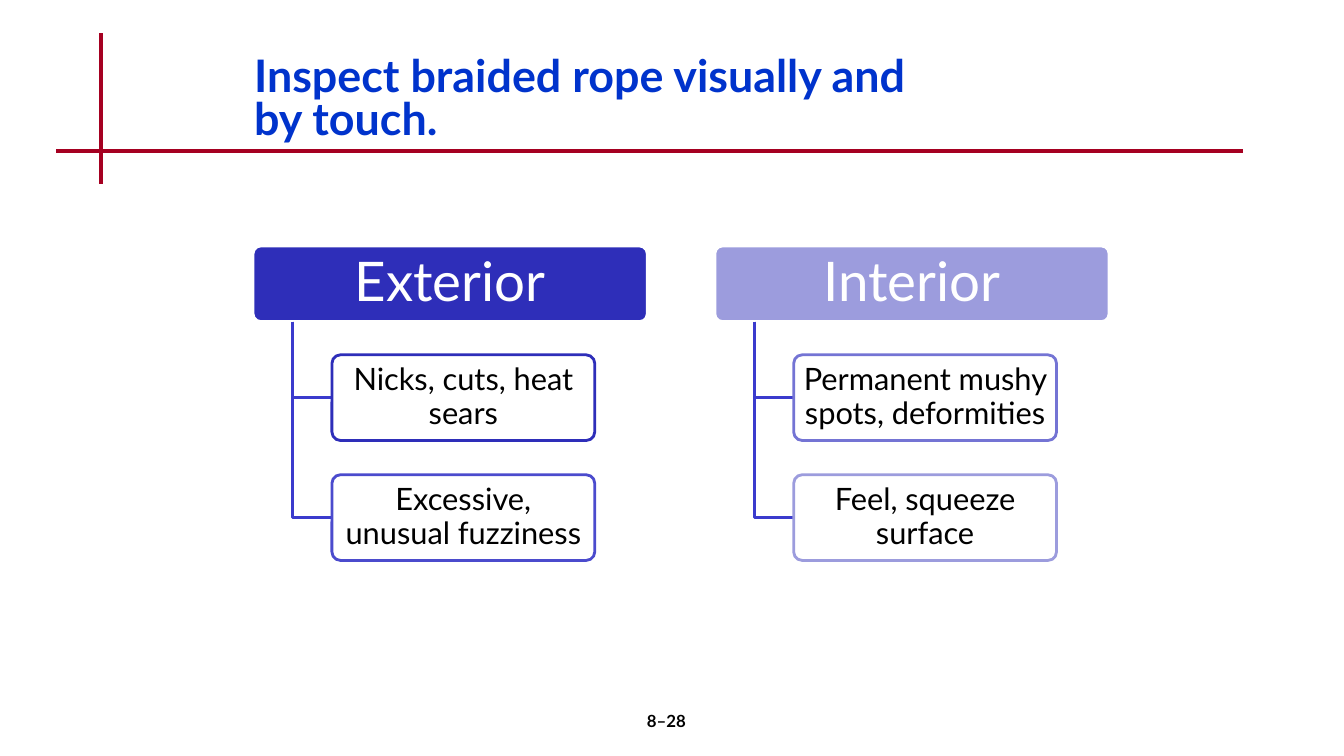
import pptx
import pptx.dml.color
import pptx.enum.shapes
import pptx.enum.text
import pptx.oxml.ns
import pptx.util
from lxml import etree

Inches = pptx.util.Inches
Pt = pptx.util.Pt
RGBColor = pptx.dml.color.RGBColor
PP_ALIGN = pptx.enum.text.PP_ALIGN
MSO_ANCHOR = pptx.enum.text.MSO_ANCHOR
MSO_SHAPE = pptx.enum.shapes.MSO_SHAPE
qn = pptx.oxml.ns.qn

WHITE = RGBColor(0xFF, 0xFF, 0xFF)
BLACK = RGBColor(0x00, 0x00, 0x00)
TITLE_BLUE = RGBColor(0x00, 0x33, 0xCC)
RULE_RED = RGBColor(0xA5, 0x00, 0x21)
BRANCH_BLUE = RGBColor(0x3B, 0x3B, 0xCD)
NAVY = RGBColor(0x2E, 0x2E, 0xB9)
INDIGO = RGBColor(0x4B, 0x4B, 0xCD)
PERIWINKLE = RGBColor(0x74, 0x74, 0xD4)
LAVENDER = RGBColor(0x9C, 0x9C, 0xDD)

COLUMNS = [
    ("Exterior", NAVY, [("Nicks, cuts, heat sears", NAVY),
                        ("Excessive, unusual fuzziness", INDIGO)]),
    ("Interior", LAVENDER, [("Permanent mushy spots, deformities", PERIWINKLE),
                            ("Feel, squeeze surface", LAVENDER)]),
]


def apply(target, values):
    """Set each attribute of target from a dict of format values."""
    for attribute, value in values.items():
        setattr(target, attribute, value)


def write(shape, wording, size, color, bold=False, align=PP_ALIGN.CENTER,
          spacing=0.9, anchor=MSO_ANCHOR.MIDDLE, inset=(0.1, 0.05)):
    """Put one formatted paragraph into a shape."""
    across, down = (Inches(value) for value in inset)
    frame = shape.text_frame
    apply(frame, {"word_wrap": True, "auto_size": pptx.enum.text.MSO_AUTO_SIZE.NONE,
                  "vertical_anchor": anchor, "margin_left": across,
                  "margin_right": across, "margin_top": down, "margin_bottom": down})
    paragraph = frame.paragraphs[0]
    apply(paragraph, {"text": wording, "alignment": align, "line_spacing": spacing,
                      "space_before": Pt(0)})
    apply(paragraph.font, {"name": "Lato", "size": Pt(size), "bold": bold})
    paragraph.font.color.rgb = color


def add_rule(slide, left, top, right, bottom):
    """Draw one straight red rule."""
    rule = slide.shapes.add_connector(
        pptx.enum.shapes.MSO_CONNECTOR.STRAIGHT,
        Inches(left), Inches(top), Inches(right), Inches(bottom))
    rule.line.color.rgb = RULE_RED
    rule.line.width = Pt(3)
    etree.SubElement(rule._element.spPr, qn("a:effectLst"))


def add_card(slide, left, top, width, height, fill, outline):
    """Draw a rounded box with a solid fill and outline."""
    card = slide.shapes.add_shape(MSO_SHAPE.ROUNDED_RECTANGLE, Inches(left),
                                  Inches(top), Inches(width), Inches(height))
    card.adjustments[0] = 0.1
    card.shadow.inherit = False
    card.fill.solid()
    card.fill.fore_color.rgb = fill
    card.line.color.rgb = outline
    card.line.width = Pt(2)
    return card


def add_branch(slide, left, top, width, height):
    """Draw an elbow going down and then right."""
    builder = slide.shapes.build_freeform(Inches(left), Inches(top))
    builder.add_line_segments([(Inches(left), Inches(top + height)),
                               (Inches(left + width), Inches(top + height))], close=False)
    branch = builder.convert_to_shape()
    branch.shadow.inherit = False
    branch.fill.background()
    branch.line.color.rgb = BRANCH_BLUE
    branch.line.width = Pt(2)


def add_column(slide, left, top, width, heading, color, findings):
    """Draw a heading with its findings hanging below it."""
    heading_height, finding_height, pitch = 0.75, 0.85, 1.19
    indent = width / 10
    heading_card = add_card(slide, left, top, width, heading_height, color, WHITE)
    write(heading_card, heading, 39, WHITE, inset=(0.08, 0.05))
    base = top + heading_height
    for row, (finding, outline) in enumerate(findings):
        finding_top = base + 0.33 + row * pitch
        add_branch(slide, left + indent, base, indent,
                   finding_top + finding_height / 2 - base)
        finding_card = add_card(slide, left + 2 * indent, finding_top, width * 2 / 3,
                                finding_height, WHITE, outline)
        write(finding_card, finding, 22, BLACK, inset=(0.05, 0.03))


def add_header(slide, left, top, width, height):
    """Place the crossed rules and the title."""
    add_rule(slide, 1, 0.33, 1, 1.83)
    add_rule(slide, 0.56, top + height, 12.33, top + height)
    title = slide.shapes.title
    apply(title, {"left": Inches(left), "top": Inches(top),
                  "width": Inches(width), "height": Inches(height)})
    write(title, "Inspect braided rope visually and by touch.", 32, TITLE_BLUE,
          bold=True, align=PP_ALIGN.LEFT, spacing=0.8)


def add_page_number(slide, left, top, width, height):
    """Place the page number at the foot."""
    page_number = slide.shapes.add_textbox(Inches(left), Inches(top),
                                           Inches(width), Inches(height))
    write(page_number, "8–28", 12, BLACK, bold=True, spacing=1.0, anchor=MSO_ANCHOR.TOP)


def main():
    """Build the slide and save it."""
    presentation = pptx.Presentation()
    presentation.slide_width = Inches(13.33)
    presentation.slide_height = Inches(7.5)
    slide = presentation.slides.add_slide(presentation.slide_layouts[5])
    add_header(slide, 2.42, 0.5, 7.03, 1)
    for index, column in enumerate(COLUMNS):
        add_column(slide, 2.51 + index * 4.58, 2.44, 3.91, *column)
    add_page_number(slide, 5.22, 7, 2.78, 0.5)
    presentation.save("out.pptx")


if __name__ == "__main__":
    main()
